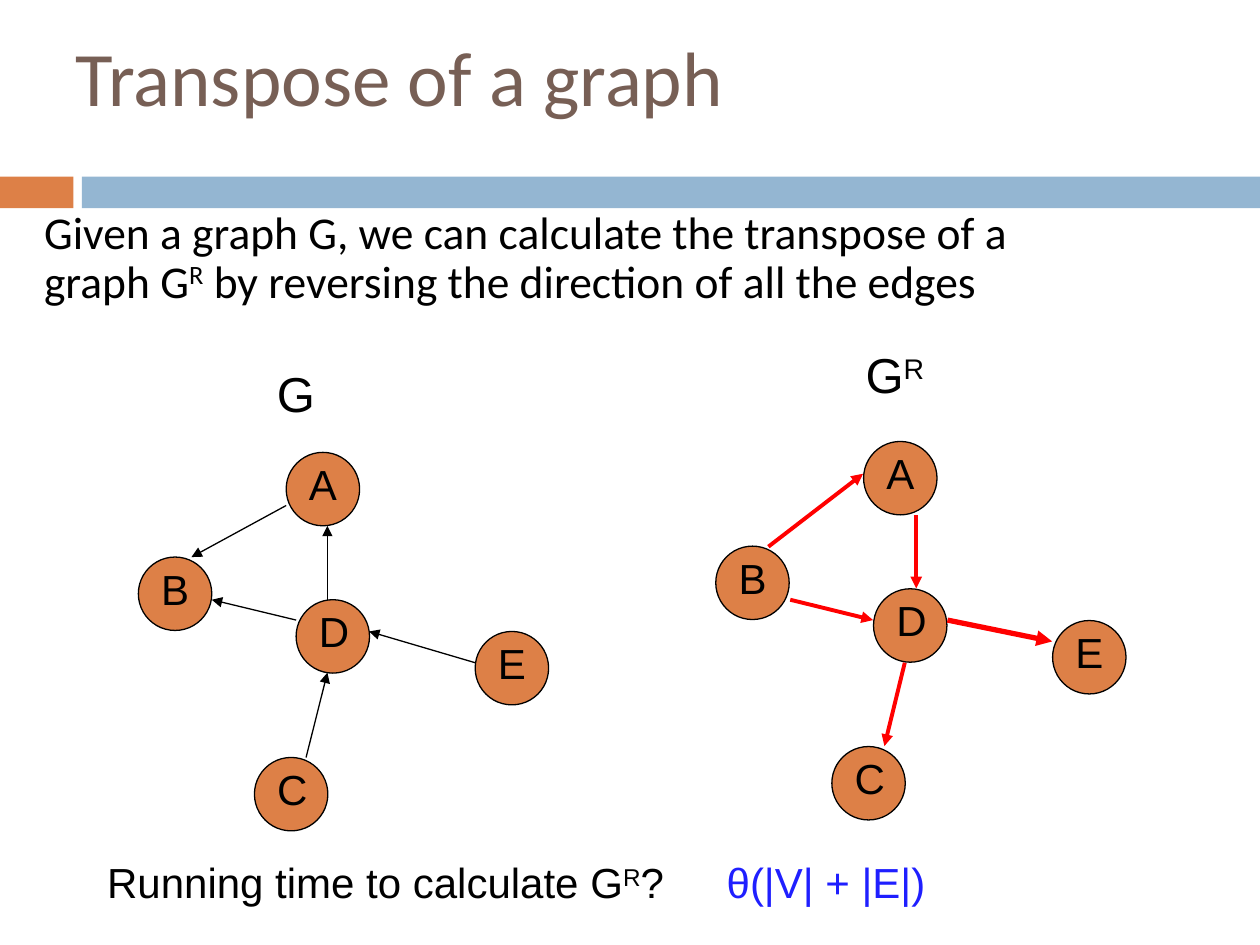
from pptx import Presentation
from pptx.dml.color import RGBColor as RGB
from pptx.enum.shapes import MSO_CONNECTOR as LINK, MSO_SHAPE as FORM
from pptx.enum.text import MSO_ANCHOR as ANCHOR, PP_ALIGN as ALIGN
from pptx.oxml.ns import qn
from pptx.util import Cm, Pt
from lxml.etree import SubElement as sub

BLACK = RGB(0, 0, 0)
RED = RGB(0xFF, 0, 0)
BLUE = RGB(0x1F, 0x1F, 0xFF)
ORANGE = RGB(0xDD, 0x80, 0x47)
SKY = RGB(0x94, 0xB6, 0xD2)
BROWN = RGB(0x77, 0x5F, 0x55)

TITLE = "Transpose of a graph"
INTRO = ["Given a graph G, we can calculate the transpose of a graph G", "^R",
         " by reversing the direction of all the edges"]
BARS = [(0, 1.48, ORANGE), (1.65, 23.75, SKY)]
NODES = {"A": (5.77, 9.12), "B": (2.79, 11.23), "C": (5.13, 15.27),
         "E": (9.58, 12.73), "D": (5.97, 12.09)}
SIZE = 1.48
GRAPHS = [
    ((0, 0), BLACK, [
        (5.77, 10.19, 3.86, 11.23, 0.75),
        (6.6, 12.09, 6.6, 10.6, 0.75),
        (5.97, 12.5, 4.27, 12.09, 0.75),
        (6.17, 15.27, 6.6, 13.56, 0.75),
        (9.58, 13.36, 7.44, 12.73, 0.75)]),
    ((11.64, -0.22), RED, [
        (15.49, 11.02, 17.4, 9.55, 2.25),
        (15.93, 12.09, 17.6, 12.5, 2.25),
        (18.47, 10.39, 18.47, 11.86, 2.25),
        (18.24, 13.36, 17.83, 15.04, 2.25),
        (19.1, 12.5, 21.21, 12.93, 3)]),
]
LABELS = [
    ((5.33, 7.21, 2.74, 1.45), ["G"], 28, BLACK),
    ((17.2, 6.83, 2.74, 1.45), ["G", "^R"], 28, BLACK),
    ((1.91, 17.15, 12.5, 1.27), ["Running time to calculate G", "^R", "?"], 24, BLACK),
    ((14.4, 17.15, 4.88, 1.27), ["θ(|V| + |E|)"], 24, BLUE),
]


def write(frame, runs, size, color, face="Arial"):
    frame.word_wrap = True
    para = frame.paragraphs[0]
    para.alignment = ALIGN.LEFT
    for text in runs:
        run = para.add_run()
        run.text = text.lstrip("^")
        font = run.font
        font.name, font.size, font.color.rgb = face, Pt(size), color
        if text.startswith("^"):
            font._element.set("baseline", "30000")
    return para


def label(shapes, box, runs, size, color, face="Arial"):
    frame = shapes.add_textbox(*map(Cm, box)).text_frame
    return write(frame, runs, size, color, face)


def shape(shapes, form, box, color):
    item = shapes.add_shape(form, *map(Cm, box))
    item.shadow.inherit = False
    item.fill.solid()
    item.fill.fore_color.rgb = color
    return item


def node(shapes, name, x, y):
    group = shapes.add_group_shape().shapes
    disc = shape(group, FORM.OVAL, (x, y, SIZE, SIZE), ORANGE)
    disc.line.color.rgb = BLACK
    disc.line.width = Pt(0.75)
    label(group, (x + 0.21, y, 1.27, 1.27), [name], 24, BLACK)


def edge(shapes, ends, width, color):
    link = shapes.add_connector(LINK.STRAIGHT, *map(Cm, ends))
    link.line.color.rgb = color
    link.line.width = Pt(width)
    sub(link.line._get_or_add_ln(), qn("a:tailEnd"), type="triangle")
    sub(link._element.spPr, qn("a:effectLst"))


def main():
    deck = Presentation()
    deck.slide_width, deck.slide_height = Cm(25.4), Cm(19.05)
    slide = deck.slides.add_slide(deck.slide_layouts[5])
    shapes = slide.shapes

    for x, width, color in BARS:
        shape(shapes, FORM.RECTANGLE, (x, 3.56, width, 0.64), color).line.fill.background()

    title = shapes.title
    title.left, title.top, title.width, title.height = map(Cm, (1.27, 0.33, 20.96, 2.41))
    title.text_frame.vertical_anchor = ANCHOR.MIDDLE
    write(title.text_frame, [TITLE], 44, BROWN, "Calibri")

    intro = label(shapes, (0.64, 4.11, 20.75, 3.28), INTRO, 26, BLACK, "Calibri")
    intro.line_spacing = 0.9
    intro.space_before = Pt(7)

    for (dx, dy), color, edges in GRAPHS:
        for name, (x, y) in NODES.items():
            node(shapes, name, x + dx, y + dy)
        for *ends, width in edges:
            edge(shapes, ends, width, color)

    for spec in LABELS:
        label(shapes, *spec)

    deck.save("out.pptx")


if __name__ == "__main__":
    main()
